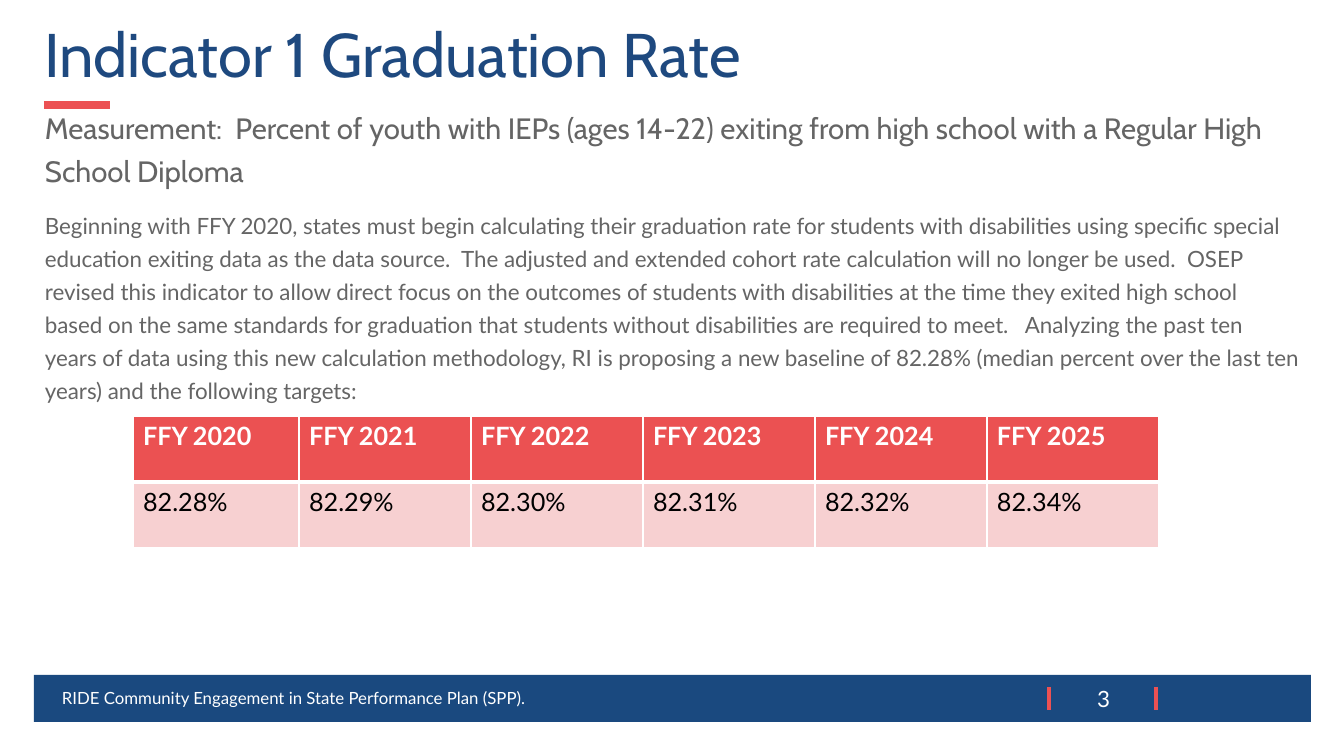
import pptx
import pptx.dml.color
import pptx.enum.shapes
import pptx.enum.text
import pptx.oxml
import pptx.oxml.ns
import pptx.util

ALIGN = pptx.enum.text.PP_ALIGN
ANCHOR = pptx.enum.text.MSO_ANCHOR
COLORS = {
    "title": "1E497F",
    "footer": "1A497F",
    "accent": "EC5153",
    "header": "EB5152",
    "cell": "F7D0D1",
    "body": "656565",
    "white": "FFFFFF",
    "black": "000000",
}
HEADING_FONT = "Cabin"
TEXT_FONT = "Lato"

MEASUREMENT = (
    "Measurement:  Percent of youth with IEPs (ages 14-22) exiting from high school "
    "with a Regular High School Diploma"
)
EXPLANATION = (
    "Beginning with FFY 2020, states must begin calculating their graduation rate for "
    "students with disabilities using specific special education exiting data as the data "
    "source.  The adjusted and extended cohort rate calculation will no longer be used.  "
    "OSEP revised this indicator to allow direct focus on the outcomes of students with "
    "disabilities at the time they exited high school based on the same standards for "
    "graduation that students without disabilities are required to meet.   Analyzing the "
    "past ten years of data using this new calculation methodology, RI is proposing a new "
    "baseline of 82.28% (median percent over the last ten years) and the following targets:"
)
TARGETS = {
    "FFY 2020": "82.28%",
    "FFY 2021": "82.29%",
    "FFY 2022": "82.30%",
    "FFY 2023": "82.31%",
    "FFY 2024": "82.32%",
    "FFY 2025": "82.34%",
}


def px(length):
    return pptx.util.Emu(round(length * 914400 / 100.8))


def rgb(color):
    return pptx.dml.color.RGBColor.from_string(COLORS[color])


class SlideBuilder:
    def __init__(self, deck):
        self.slide = deck.slides.add_slide(deck.slide_layouts[5])
        self.shapes = self.slide.shapes

    def add_run(self, frame, text, size, color, font=TEXT_FONT, bold=False,
                align=ALIGN.LEFT, spacing=None):
        paragraph = frame.paragraphs[0]
        paragraph.alignment = align
        if spacing:
            paragraph.line_spacing = spacing
        run = paragraph.add_run()
        run.text = text
        run.font.name = font
        run.font.size = pptx.util.Pt(size)
        run.font.bold = bold
        run.font.color.rgb = rgb(color)

    def title(self, text, left, top, width, height):
        heading = self.shapes.title
        heading.left, heading.top = px(left), px(top)
        heading.width, heading.height = px(width), px(height)
        frame = heading.text_frame
        frame.auto_size = pptx.enum.text.MSO_AUTO_SIZE.NONE
        frame.vertical_anchor = ANCHOR.MIDDLE
        self.add_run(frame, text, 44, "title", HEADING_FONT, spacing=0.9)

    def text(self, text, left, top, width, height, size, color, anchor=ANCHOR.TOP, **style):
        frame = self.shapes.add_textbox(px(left), px(top), px(width), px(height)).text_frame
        frame.word_wrap = True
        frame.vertical_anchor = anchor
        self.add_run(frame, text, size, color, **style)

    def bar(self, left, top, width, height, color):
        bar = self.shapes.add_shape(pptx.enum.shapes.MSO_SHAPE.RECTANGLE,
                                    px(left), px(top), px(width), px(height))
        bar.shadow.inherit = False
        bar.fill.solid()
        bar.fill.fore_color.rgb = rgb(color)
        bar.line.fill.background()

    def line(self, x1, y1, x2, y2, color, weight):
        line = self.shapes.add_connector(pptx.enum.shapes.MSO_CONNECTOR.STRAIGHT,
                                         px(x1), px(y1), px(x2), px(y2))
        line.line.color.rgb = rgb(color)
        line.line.width = pptx.util.Pt(weight)
        properties = line._element.spPr
        properties.append(properties.makeelement(pptx.oxml.ns.qn("a:effectLst"), {}))

    def cell_borders(self, cell, weights):
        """Draw white borders, with weights in points keyed by L, R, T and B."""
        properties = cell._tc.get_or_add_tcPr()
        for side, weight in weights.items():
            properties.append(pptx.oxml.parse_xml(
                f'<a:ln{side} {pptx.oxml.ns.nsdecls("a")} w="{pptx.util.Pt(weight)}">'
                f'<a:solidFill><a:srgbClr val="{COLORS["white"]}"/></a:solidFill>'
                f'</a:ln{side}>'))

    def table(self, rows, left, top, column_widths, row_height):
        table = self.shapes.add_table(
            len(rows), len(column_widths), px(left), px(top),
            px(sum(column_widths)), px(row_height * len(rows))).table
        table.horz_banding = False
        for column, width in zip(table.columns, column_widths):
            column.width = px(width)
        for r, values in enumerate(rows):
            table.rows[r].height = px(row_height)
            is_header = r == 0
            for c, value in enumerate(values):
                cell = table.cell(r, c)
                self.cell_borders(cell, {"L": 1, "R": 1, "T": 1 if is_header else 3,
                                         "B": 3 if is_header else 1})
                cell.fill.solid()
                cell.fill.fore_color.rgb = rgb("header" if is_header else "cell")
                self.add_run(cell.text_frame, value, 18,
                             "white" if is_header else "black", bold=is_header)


def main():
    deck = pptx.Presentation()
    deck.slide_width, deck.slide_height = px(1344), px(756)
    slide = SlideBuilder(deck)

    slide.line(44, 105, 110, 105, "accent", 6)
    slide.bar(34, 675, 1277, 47, "footer")
    for divider in (1049, 1156):
        slide.line(divider, 687, divider, 710, "accent", 2.25)

    slide.title("Indicator 1 Graduation Rate", 34, 19, 1277, 78)
    slide.text("RIDE Community Engagement in State Performance Plan (SPP).",
               52, 678, 854, 40, 12, "white", ANCHOR.MIDDLE)
    slide.text("3", 1071, 680, 65, 37, 16, "white", ANCHOR.MIDDLE, align=ALIGN.CENTER)
    slide.text(MEASUREMENT, 35, 97, 1275, 111, 21, "body", font=HEADING_FONT, spacing=1.23)
    slide.text(EXPLANATION, 35, 201, 1275, 437, 16, "body", spacing=1.23)
    slide.table([list(TARGETS), list(TARGETS.values())], 133, 416,
                [166] + [172] * (len(TARGETS) - 1), 66)

    deck.save("out.pptx")


if __name__ == "__main__":
    main()
